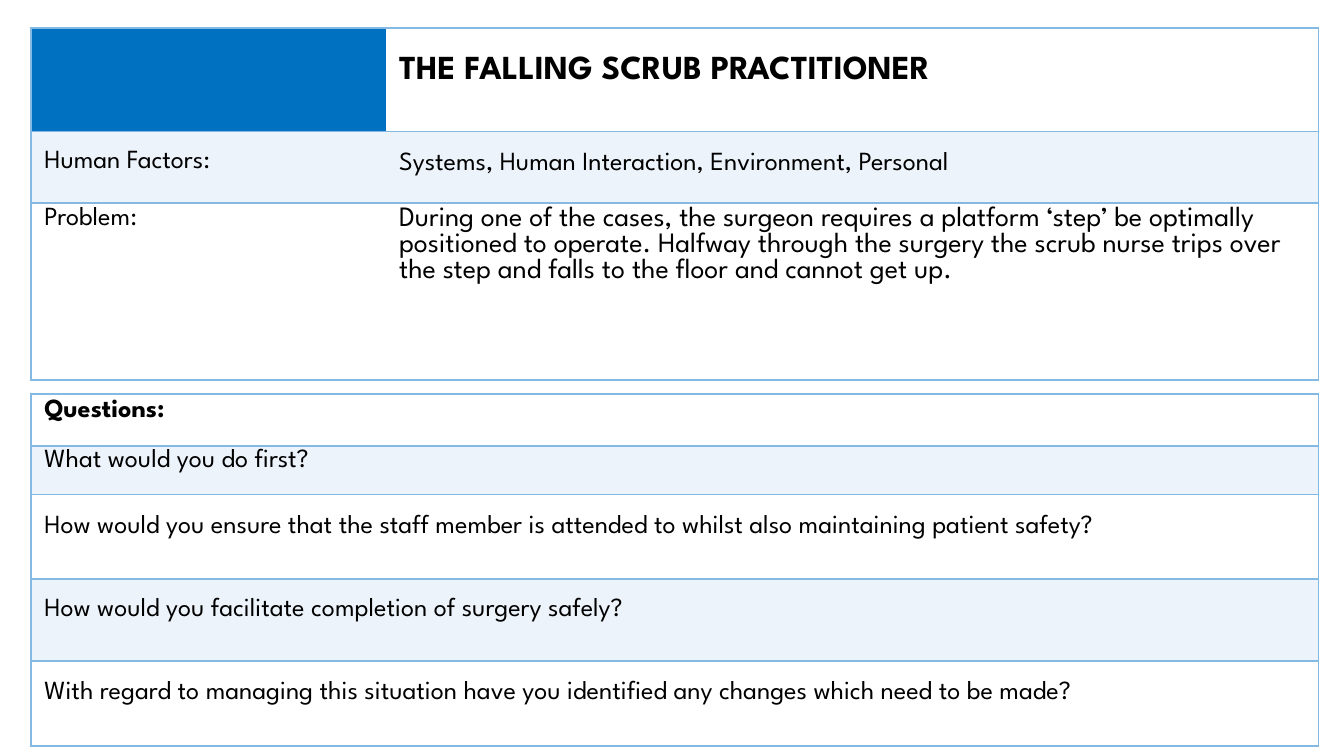
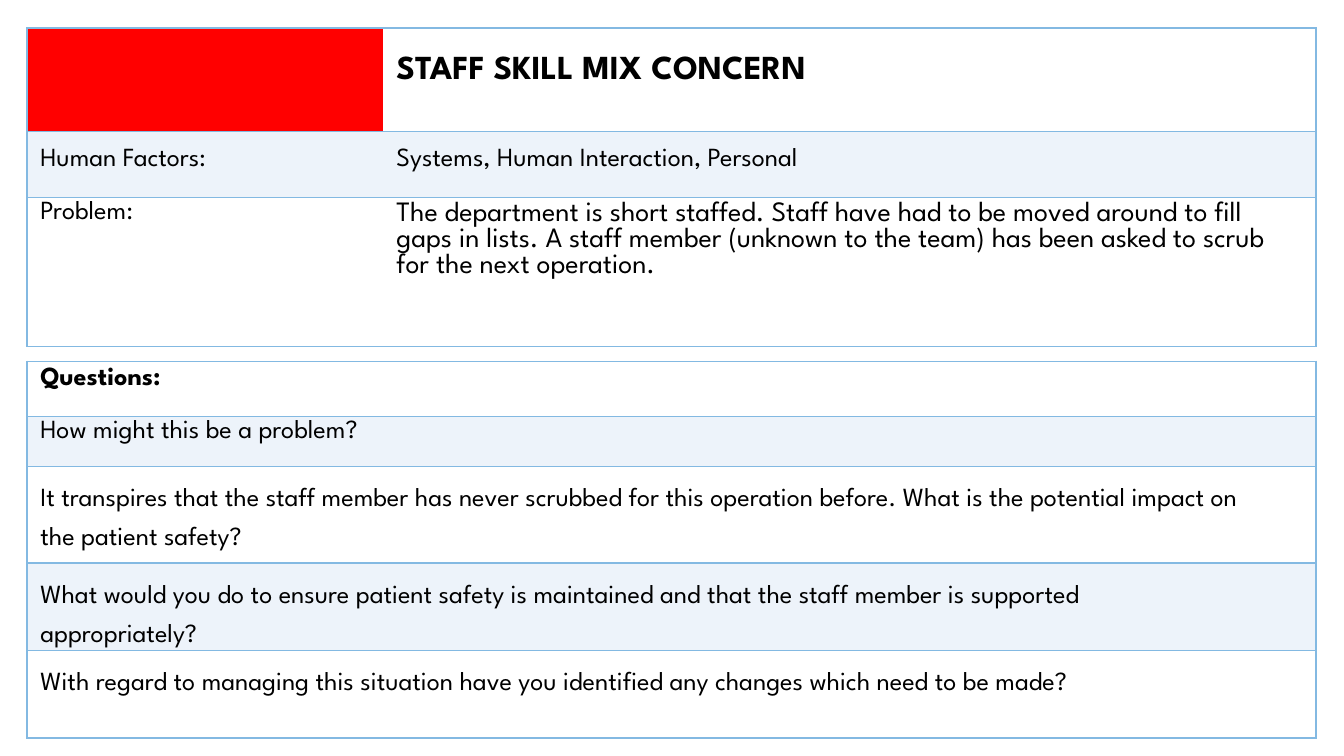
from dataclasses import dataclass
from lxml.etree import SubElement
from pptx import Presentation
from pptx.dml.color import RGBColor
from pptx.oxml.ns import qn
from pptx.util import Emu, Inches, Pt

FONT = "League Spartan"
BLACK, WHITE, TINT, BORDER = "000000", "FFFFFF", "EDF3FA", "83B9E2"
BLUE, RED = "0070C0", "FF0000"
GRID = 100  # columns across and rows down the slide
FACTORS, PROBLEM, QUESTIONS = "Human Factors:", "Problem:", "Questions:"
CHANGES = ("With regard to managing this situation have you identified "
           "any changes which need to be made?")


def color(value):
    return RGBColor.from_string(value)


@dataclass
class Entry:
    """Content of one table cell; top is in grid rows, right in grid columns."""
    text: str
    top: float
    size: int = 14
    bold: bool = False
    fill: str = WHITE
    leading: int = 0
    right: float = 0


class Deck:
    def __init__(self):
        self.presentation = Presentation()
        self.presentation.slide_width = Inches(10)
        self.presentation.slide_height = Inches(5.625)
        self.slide = None

    def columns(self, count):
        return Emu(round(self.presentation.slide_width * count / GRID))

    def rows(self, count):
        return Emu(round(self.presentation.slide_height * count / GRID))

    def add_slide(self):
        self.slide = self.presentation.slides.add_slide(
            self.presentation.slide_layouts[6])

    def border(self, cell, first, last):
        """Rule the cell above and below, and on the table's outer sides."""
        properties = cell._tc.get_or_add_tcPr()
        for side, shown in (("L", first), ("R", last), ("T", True), ("B", True)):
            line = SubElement(properties, qn(f"a:ln{side}"), w=str(Pt(1)))
            if shown:
                fill = SubElement(line, qn("a:solidFill"))
                SubElement(fill, qn("a:srgbClr"), val=BORDER)
            else:
                SubElement(line, qn("a:noFill"))

    def fill_cell(self, cell, entry):
        cell.margin_left = cell.margin_right = cell.margin_bottom = 0
        cell.margin_top = self.rows(entry.top)
        cell.fill.solid()
        cell.fill.fore_color.rgb = color(entry.fill)
        cell.text = entry.text
        paragraph = cell.text_frame.paragraphs[0]
        indents = paragraph._p.get_or_add_pPr()
        indents.set("marL", str(self.columns(1)))
        indents.set("marR", str(self.columns(entry.right)))
        if entry.leading:
            paragraph.line_spacing = Pt(entry.leading)
        font = paragraph.font
        font.name, font.size, font.bold = FONT, Pt(entry.size), entry.bold
        font.color.rgb = color(BLACK)

    def table(self, left, top, widths, heights, entries):
        frame = self.slide.shapes.add_table(
            len(heights), len(widths), self.columns(left), self.rows(top),
            self.columns(sum(widths)), self.rows(sum(heights)))
        table = frame.table
        table.first_row = table.horz_banding = False
        for column, width in zip(table.columns, widths):
            column.width = self.columns(width)
        for row, height, line in zip(table.rows, heights, entries):
            row.height = self.rows(height)
            for index, (cell, entry) in enumerate(zip(row.cells, line)):
                self.border(cell, index == 0, index == len(widths) - 1)
                self.fill_cell(cell, entry)

    def scenario(self, left, widths, heights, accent, title, factors, problem,
                 factors_top):
        """Upper table: coloured block with title, factors and problem."""
        self.table(left, 3.73, widths, heights, [
            [Entry("", 0, fill=accent), Entry(title, 3.73, size=18, bold=True)],
            [Entry(FACTORS, factors_top, fill=TINT), factors],
            [Entry(PROBLEM, 0.53), problem],
        ])

    def questions(self, left, top, width, heights, entries):
        """Lower table: heading, then questions on alternating fills."""
        lines = [Entry(QUESTIONS, 0.71, bold=True), *entries]
        for index, entry in enumerate(lines):
            entry.fill = TINT if index % 2 else WHITE
        self.table(left, top, [width], heights, [[entry] for entry in lines])


def main():
    deck = Deck()

    # Falling scrub practitioner
    deck.add_slide()
    deck.scenario(
        2.3, [26.4, 69.4], [13.69, 9.42, 23.47], BLUE,
        "THE FALLING SCRUB PRACTITIONER",
        Entry("Systems, Human Interaction, Environment, Personal", 0.71,
              fill=TINT, leading=21),
        Entry("During one of the cases, the surgeon requires a platform ‘step’ "
              "be optimally positioned to operate. Halfway through the surgery "
              "the scrub nurse trips over the step and falls to the floor and "
              "cannot get up.", 0.53, size=15),
        factors_top=2.49)
    deck.questions(2.3, 52.09, 95.8, [6.93, 6.4, 11.2, 10.84, 11.2], [
        Entry("What would you do first?", 0.36),
        Entry("How would you ensure that the staff member is attended to "
              "whilst also maintaining patient safety?", 0.71, leading=21),
        Entry("How would you facilitate completion of surgery safely?", 2.49),
        Entry(CHANGES, 0.71, leading=21),
    ])

    # Staff skill mix
    deck.add_slide()
    deck.scenario(
        2, [26.5, 69.4], [13.69, 8.71, 19.73], RED,
        "STAFF SKILL MIX CONCERN",
        Entry("Systems, Human Interaction, Personal", 2.13, fill=TINT),
        Entry("The department is short staffed. Staff have had to be moved "
              "around to fill gaps in lists. A staff member (unknown to the "
              "team) has been asked to scrub for the next operation.",
              0.53, size=15, right=3),
        factors_top=2.13)
    deck.questions(2, 47.82, 95.9, [7.29, 6.58, 12.8, 11.56, 11.56], [
        Entry("How might this be a problem?", 0.53),
        Entry("It transpires that the staff member has never scrubbed for this "
              "operation before. What is the potential impact on the patient "
              "safety?", 0.89, leading=21, right=4),
        Entry("What would you do to ensure patient safety is maintained and "
              "that the staff member is supported appropriately?", 0.89,
              leading=21, right=10),
        Entry(CHANGES, 0.89, leading=21),
    ])

    deck.presentation.save("out.pptx")


if __name__ == "__main__":
    main()
